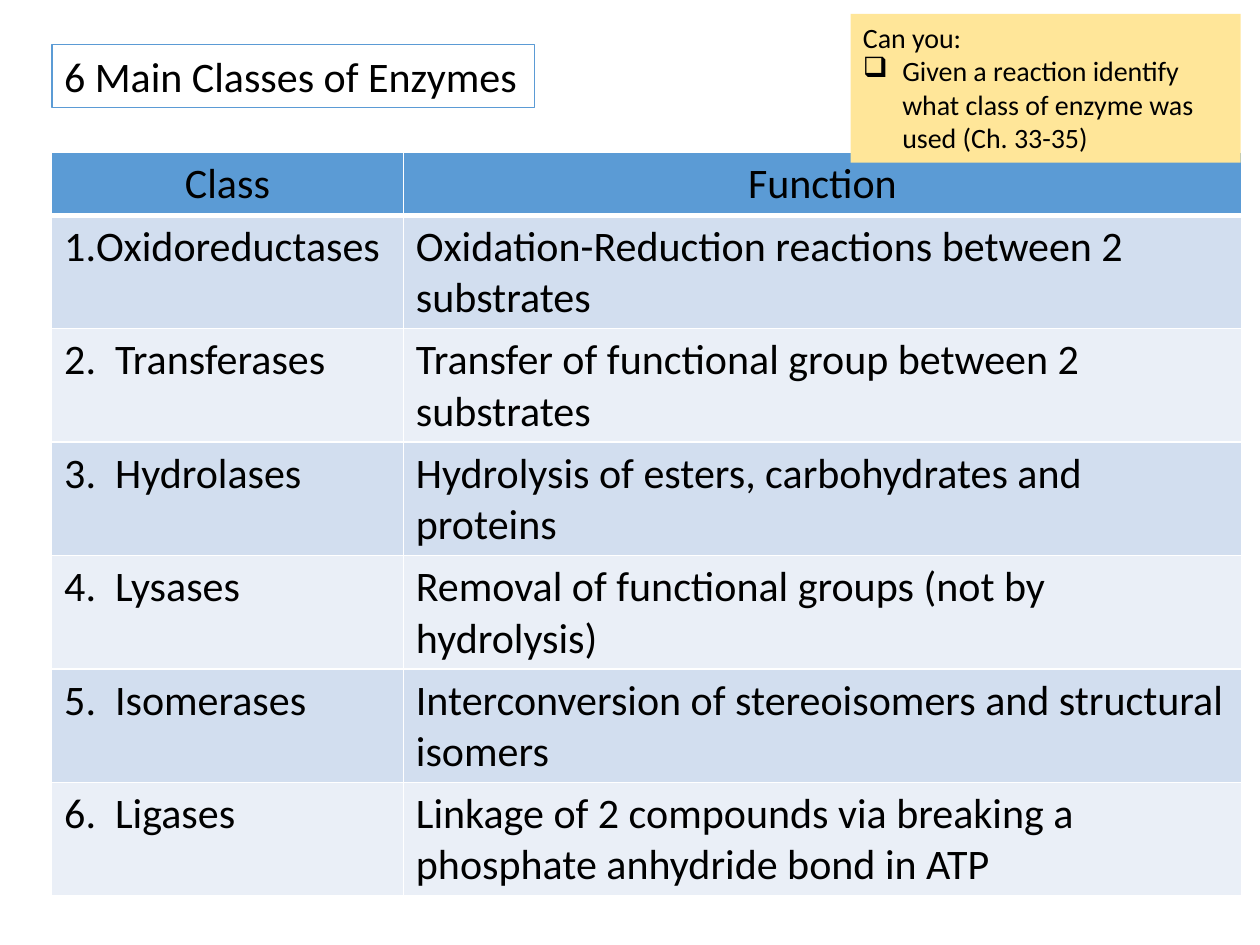
"""Build a slide that lists the six main classes of enzymes."""
from lxml import etree
from pptx import Presentation
from pptx import util as u
from pptx.dml.color import RGBColor
from pptx.enum import shapes, text
from pptx.oxml import ns

FONT = "Calibri"
COLOURS = {
    "text": "000000",
    "white": "FFFFFF",
    "blue": "5B9BD5",
    "band_dark": "D2DEEF",
    "band_light": "EAEFF7",
    "note": "FFE699",
}
HEADINGS = ("Class", "Function")
ENZYMES = [
    ("Oxidoreductases", "Oxidation-Reduction reactions between 2 substrates"),
    ("2.  Transferases", "Transfer of functional group between 2 substrates"),
    ("3.  Hydrolases", "Hydrolysis of esters, carbohydrates and proteins"),
    ("4.  Lysases", "Removal of functional groups (not by hydrolysis)"),
    ("5.  Isomerases", "Interconversion of stereoisomers and structural isomers"),
    ("6.  Ligases", "Linkage of 2 compounds via breaking a phosphate anhydride bond in ATP"),
]
COLUMN_WIDTHS = (201, 479)
HEADER_HEIGHT, ROW_HEIGHT = 36, 64.8


def colour(name):
    return RGBColor.from_string(COLOURS[name])


def paint(item, name):
    item.fill.solid()
    item.fill.fore_color.rgb = colour(name)


def add_bullet(para, indent, char=None):
    """Hang the paragraph behind a character, or behind a number if none is given."""
    props = para._p.get_or_add_pPr()
    props.set("marL", str(u.Pt(indent)))
    props.set("indent", str(-u.Pt(indent)))
    if char:
        etree.SubElement(props, ns.qn("a:buChar"), char=char)
    else:
        etree.SubElement(props, ns.qn("a:buAutoNum"), type="arabicPeriod")


def write(frame, words, size=24, align=text.PP_ALIGN.LEFT, new=False):
    """Write one formatted paragraph into a text frame and return it."""
    para = frame.add_paragraph() if new else frame.paragraphs[0]
    para.alignment = align
    span = para.add_run()
    span.text = words
    span.font.name = FONT
    span.font.size = u.Pt(size)
    span.font.color.rgb = colour("text")
    return para


def add_box(page, left, top, width, height, fill, line=None, wrap=True):
    """Add a rectangle and return its text frame."""
    box = page.shapes.add_shape(
        shapes.MSO_SHAPE.RECTANGLE, u.Pt(left), u.Pt(top), u.Pt(width), u.Pt(height))
    box.shadow.inherit = False
    paint(box, fill)
    if line:
        box.line.color.rgb = colour(line)
        box.line.width = u.Pt(1)
    else:
        box.line.fill.background()
    frame = box.text_frame
    frame.word_wrap = wrap
    frame.vertical_anchor = text.MSO_ANCHOR.TOP
    frame.auto_size = text.MSO_AUTO_SIZE.SHAPE_TO_FIT_TEXT
    return frame


def set_borders(cell, bottom=1):
    props = cell._tc.get_or_add_tcPr()
    for side, width in (("L", 1), ("R", 1), ("T", 1), ("B", bottom)):
        line = etree.SubElement(props, ns.qn(f"a:ln{side}"), w=str(u.Pt(width)))
        fill = etree.SubElement(line, ns.qn("a:solidFill"))
        etree.SubElement(fill, ns.qn("a:srgbClr"), val=COLOURS["white"])


def fill_cell(cell, words, fill, bottom=1, **style):
    set_borders(cell, bottom)
    paint(cell, fill)
    return write(cell.text_frame, words, **style)


def add_enzyme_table(page, left, top):
    height = HEADER_HEIGHT + ROW_HEIGHT * len(ENZYMES)
    table = page.shapes.add_table(
        len(ENZYMES) + 1, len(HEADINGS), u.Pt(left), u.Pt(top),
        u.Pt(sum(COLUMN_WIDTHS)), u.Pt(height)).table
    table.horz_banding = False
    for column, width in zip(table.columns, COLUMN_WIDTHS):
        column.width = u.Pt(width)
    for index, row in enumerate(table.rows):
        row.height = u.Pt(ROW_HEIGHT if index else HEADER_HEIGHT)
    for cell, heading in zip(table.rows[0].cells, HEADINGS):
        para = fill_cell(cell, heading, "blue", bottom=3, align=text.PP_ALIGN.CENTER)
        para.runs[0].font.bold = False
    for index, enzyme in enumerate(ENZYMES):
        band = "band_light" if index % 2 else "band_dark"
        for cell, words in zip(table.rows[index + 1].cells, enzyme):
            fill_cell(cell, words, band)
    add_bullet(table.cell(1, 0).text_frame.paragraphs[0], 18)


def main():
    deck = Presentation()
    deck.slide_width, deck.slide_height = u.Pt(720), u.Pt(540)
    page = deck.slides.add_slide(deck.slide_layouts[6])

    title = add_box(page, 29.5, 25.5, 276, 36, "white", line="blue", wrap=False)
    write(title, "6 Main Classes of Enzymes")

    add_enzyme_table(page, 29.5, 87)

    note = add_box(page, 486, 8, 223, 85, "note")
    write(note, "Can you:", size=16)
    task = write(note, "Given a reaction identify what class of enzyme was used (Ch. 33-35)",
                 size=16, new=True)
    add_bullet(task, 22.5, char="❑")

    deck.save("out.pptx")


if __name__ == "__main__":
    main()
